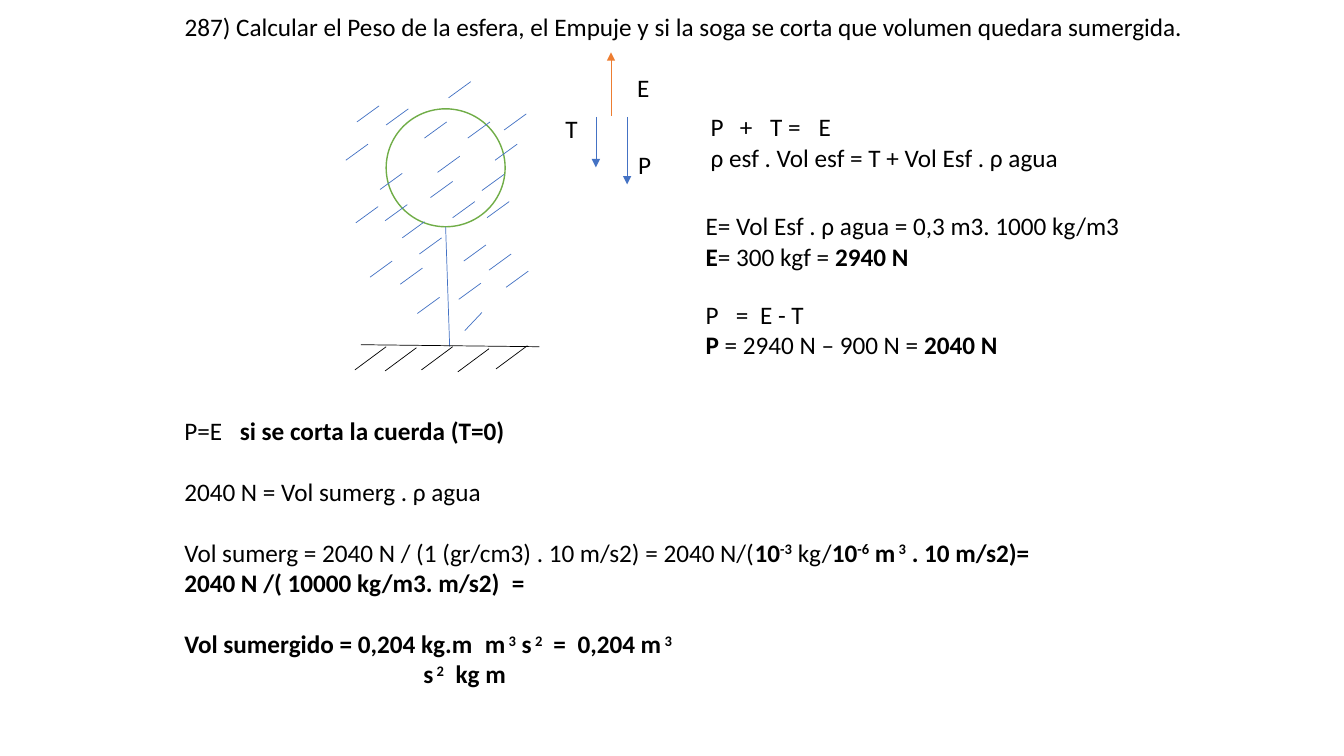
"""Build the slide that solves the buoyancy problem of a sphere tied to the bottom."""
import pptx
import pptx.util
import pptx.dml.color
import pptx.enum.shapes
import pptx.enum.text
import lxml.etree
from pptx.util import Inches, Pt
from pptx.oxml.ns import qn

BLACK, WATER, FORCE, SPHERE = "000000", "4472C4", "ED7D31", "70AD47"
BLANK_LINE = 22

QUESTION = ("287) Calcular el Peso de la esfera, el Empuje y si la soga se corta "
            "que volumen quedara sumergida.")
QUESTION_BOX = (1.73, 0.06, 10.4, 0.4)

SPHERE_BOX = (3.83, 1.08, 1.18, 1.17)
ROPE = (4.42, 2.25, 4.46, 3.44)
GROUND = (3.58, 3.42, 5.35, 3.44)
LAST_RIPPLE = (4.78, 3.1, 4.61, 3.28)

GROUND_STEP = (-0.31, 0.23)
GROUND_STARTS = [(3.83, 3.44), (4.13, 3.45), (4.49, 3.44), (4.85, 3.46), (5.23, 3.43)]

RIPPLE_STEP = (0.22, -0.16)
RIPPLE_STARTS = [
    (3.83, 1.24), (3.54, 1.21), (3.43, 1.59), (4.21, 1.37), (3.77, 1.88), (4.64, 1.37),
    (4.27, 1.96), (4.49, 2.16), (4.34, 1.71), (4.91, 1.59), (5, 1.29), (4.78, 1.89),
    (3.82, 2.19), (3.53, 2.21), (4.16, 2.52), (3.99, 2.36), (4.83, 2.16), (3.97, 2.82),
    (4.6, 2.59), (3.67, 2.75), (4.85, 2.68), (4.14, 3.11), (4.55, 2.97), (4.45, 0.97),
    (5.02, 2.85),
]

FORCES = [
    ((6.06, 1.15, 6.06, 0.52), FORCE),
    ((5.91, 1.16, 5.91, 1.66), WATER),
    ((6.22, 1.16, 6.22, 1.83), WATER),
]

# Each paragraph: space before, tab stops, runs of (text, bold, superscript)
NOTES = [
    ((6.22, 0.67, 0.32, 0.4), False, [(0, (), [("E", 0, 0)])]),
    ((6.23, 1.43, 0.33, 0.4), False, [(0, (), [("P", 0, 0)])]),
    ((5.51, 1.08, 0.32, 0.4), False, [(0, (), [("T", 0, 0)])]),
    ((6.95, 1.06, 3.69, 0.71), False, [
        (0, (0.29, 0.59, 1.07), [("P\t+\tT =\tE", 0, 0)]),
        (0, (), [("ρ esf . Vol esf = T + Vol Esf . ρ agua", 0, 0)]),
    ]),
    ((6.9, 2.04, 5, 0.71), True, [
        (0, (), [("E= Vol Esf . ρ agua = 0,3 m3. 1000 kg/m3", 0, 0)]),
        (0, (), [("E", 1, 0), ("= 300 kgf = ", 0, 0), ("2940 N", 1, 0)]),
    ]),
    ((6.9, 2.92, 3.13, 0.71), False, [
        (0, (0.3, 0.54), [("P\t=\tE - T", 0, 0)]),
        (0, (), [("P", 1, 0), (" = 2940 N – 900 N = ", 0, 0), ("2040 N", 1, 0)]),
    ]),
    ((1.73, 4.07, 9.97, 2.83), True, [
        (0, (0.55,), [("P=E\t", 0, 0), ("si se corta la cuerda (T=0)", 1, 0)]),
        (BLANK_LINE, (), [("2040 N = Vol sumerg . ρ agua", 0, 0)]),
        (BLANK_LINE, (), [
            ("Vol sumerg = 2040 N / (1 (gr/cm3) . 10 m/s2) = 2040 N/(", 0, 0),
            ("10", 1, 0), ("-3", 1, 1), (" kg/", 0, 0), ("10", 1, 0), ("-6", 1, 1),
            (" m", 1, 0), (" 3", 1, 1), (" . 10 m/s2)=", 1, 0)]),
        (0, (3.25,), [("2040 N /( 10000 kg/m3. m/s2)\t=", 1, 0)]),
        (BLANK_LINE, (2.98, 3.66, 3.9), [
            ("Vol sumergido = 0,204 kg.m\tm", 1, 0), (" 3", 1, 1), (" s", 1, 0),
            (" 2", 1, 1), ("\t=\t0,204 m", 1, 0), (" 3", 1, 1)]),
        (0, (2.37, 2.69), [("\ts", 1, 0), (" 2", 1, 1), ("\tkg m", 1, 0)]),
    ]),
]


def colour(value):
    return pptx.dml.color.RGBColor.from_string(value)


def format_font(font, bold=False):
    font.name, font.size, font.bold = "Calibri", Pt(18), bool(bold)
    font.color.rgb = colour(BLACK)


def draw_line(slide, ends, hue, arrow=False):
    stroke = slide.shapes.add_connector(
        pptx.enum.shapes.MSO_CONNECTOR.STRAIGHT, *map(Inches, ends))
    stroke.line.color.rgb = colour(hue)
    stroke.line.width = Pt(0.5)
    properties = stroke.element.spPr
    if arrow:
        outline = properties.find(qn("a:ln"))
        lxml.etree.SubElement(outline, qn("a:tailEnd"), type="triangle")
    lxml.etree.SubElement(properties, qn("a:effectLst"))


def draw_strokes(slide, starts, step, hue):
    for x, y in starts:
        draw_line(slide, (x, y, x + step[0], y + step[1]), hue)


def write_note(slide, box, wraps, lines):
    frame = slide.shapes.add_textbox(*map(Inches, box)).text_frame
    frame.word_wrap = wraps
    for number, (gap, stops, pieces) in enumerate(lines):
        paragraph = frame.add_paragraph() if number else frame.paragraphs[0]
        paragraph.space_before = Pt(gap)
        if stops:
            tabs = lxml.etree.SubElement(paragraph._p.get_or_add_pPr(), qn("a:tabLst"))
            for stop in stops:
                lxml.etree.SubElement(tabs, qn("a:tab"), pos=str(Inches(stop)), algn="l")
        for text, bold, raised in pieces:
            run = paragraph.add_run()
            run.text = text
            format_font(run.font, bold)
            if raised:
                run._r.get_or_add_rPr().set("baseline", "30000")


def write_question(slide):
    question = slide.shapes.title
    question.left, question.top, question.width, question.height = map(Inches, QUESTION_BOX)
    frame = question.text_frame
    frame.text = QUESTION
    frame.word_wrap = False
    frame.auto_size = pptx.enum.text.MSO_AUTO_SIZE.NONE
    frame.vertical_anchor = pptx.enum.text.MSO_ANCHOR.TOP
    frame.paragraphs[0].alignment = pptx.enum.text.PP_ALIGN.LEFT
    format_font(frame.paragraphs[0].runs[0].font)


def draw_sphere(slide):
    sphere = slide.shapes.add_shape(
        pptx.enum.shapes.MSO_SHAPE.OVAL, *map(Inches, SPHERE_BOX))
    sphere.shadow.inherit = False
    sphere.fill.solid()
    sphere.fill.fore_color.rgb = colour("FFFFFF")
    sphere.line.color.rgb = colour(SPHERE)
    sphere.line.width = Pt(1)


def main():
    deck = pptx.Presentation()
    deck.slide_width, deck.slide_height = Inches(13.33), Inches(7.5)
    slide = deck.slides.add_slide(deck.slide_layouts[5])
    write_question(slide)
    draw_sphere(slide)
    draw_line(slide, ROPE, WATER)
    draw_line(slide, GROUND, BLACK)
    draw_strokes(slide, GROUND_STARTS, GROUND_STEP, BLACK)
    draw_strokes(slide, RIPPLE_STARTS, RIPPLE_STEP, WATER)
    draw_line(slide, LAST_RIPPLE, WATER)
    for ends, hue in FORCES:
        draw_line(slide, ends, hue, arrow=True)
    for box, wraps, lines in NOTES:
        write_note(slide, box, wraps, lines)
    deck.save("out.pptx")


if __name__ == "__main__":
    main()
